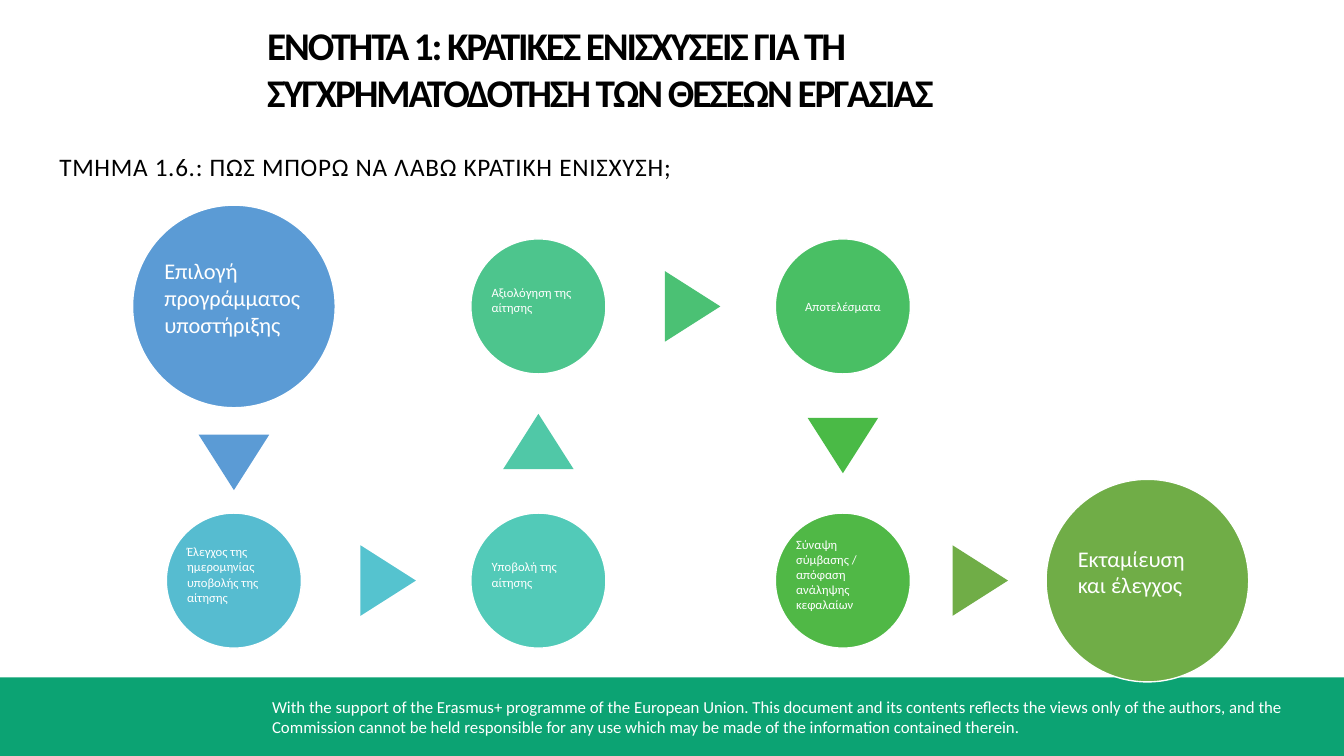
import pptx
import pptx.util
import pptx.dml.color
import pptx.enum.shapes
import pptx.enum.text

Inches = pptx.util.Inches
Pt = pptx.util.Pt
KIND = pptx.enum.shapes.MSO_SHAPE
ANCHOR = pptx.enum.text.MSO_ANCHOR
ALIGN = pptx.enum.text.PP_ALIGN

TITLE = "ΕΝΌΤΗΤΑ 1: ΚΡΑΤΙΚΈΣ ΕΝΙΣΧΎΣΕΙΣ ΓΙΑ ΤΗ ΣΥΓΧΡΗΜΑΤΟΔΌΤΗΣΗ ΤΩΝ ΘΈΣΕΩΝ ΕΡΓΑΣΊΑΣ"
TOPIC = "ΤΜΗΜΑ 1.6.: ΠΩΣ ΜΠΟΡΩ ΝΑ ΛΆΒΩ ΚΡΑΤΙΚΉ ΕΝΊΣΧΥΣΗ;"
NOTE = (
    "With the support of the Erasmus+ programme of the European Union. "
    "This document and its contents reflects the views only of the authors, "
    "and the Commission cannot be held responsible for any use which may be "
    "made of the information contained therein."
)
COLORS = {
    "white": "FFFFFF", "black": "000000", "bar": "0CA373",
    "pick": "5B9BD5", "check": "56BCD0", "apply": "52CAB8", "rate": "4DC58D",
    "result": "49BF64", "sign": "50B846", "pay": "70AD47",
    "to check": "5B9BD5", "to apply": "55C3CF", "to rate": "50C8A7",
    "to result": "4BC174", "to sign": "4ABA46", "to pay": "70AD47",
}
STEPS = [
    ("pick", 0, 0, "big", "Επιλογή προγράμματος υποστήριξης"),
    ("check", 0, 1, "small", "Έλεγχος της ημερομηνίας υποβολής της αίτησης"),
    ("apply", 1, 1, "small", "Υποβολή της αίτησης"),
    ("rate", 1, 0, "small", "Αξιολόγηση της αίτησης"),
    ("result", 2, 0, "small", "Αποτελέσματα"),
    ("sign", 2, 1, "small", "Σύναψη σύμβασης / απόφαση ανάληψης κεφαλαίων"),
    ("pay", 3, 1, "big", "Εκταμίευση και έλεγχος"),
]
SIZES = {"big": (2.01, 16, 0.02, 0.18), "small": (1.34, 9, 0.01, 0.12)}
LEFT, TOP = 2.32, 3.04
STEP_X, STEP_Y = 3.02, 2.72
HEAD_W, HEAD_H = 0.7, 0.55
NUDGE = 0.02
TURNS = {(1, 0): 90, (0, 1): 180, (0, -1): 0}


def color(name):
    return pptx.dml.color.RGBColor.from_string(COLORS[name])


def write(para, text, size, tint, bold=False):
    run = para.add_run()
    run.text = text
    run.font.name = "Calibri"
    run.font.size = Pt(size)
    run.font.bold = bold
    run.font.color.rgb = color(tint)
    return run


def write_caps(para, text, size, gap, bold=False):
    run = write(para, text, size, "black", bold)
    run.font.language_id = pptx.enum.lang.MSO_LANGUAGE_ID.GREEK
    props = run.font._element
    props.set("cap", "all")
    props.set("spc", str(gap))


def pad(frame, left, top, right, low):
    frame.margin_left, frame.margin_top = Inches(left), Inches(top)
    frame.margin_right, frame.margin_bottom = Inches(right), Inches(low)


def add_shape(slide, kind, x, y, w, h, fill):
    shape = slide.shapes.add_shape(kind, Inches(x), Inches(y), Inches(w), Inches(h))
    shape.shadow.inherit = False
    shape.fill.solid()
    shape.fill.fore_color.rgb = color(fill)
    shape.line.fill.background()
    return shape


def add_box(slide, x, y, w, h):
    box = slide.shapes.add_textbox(Inches(x), Inches(y), Inches(w), Inches(h))
    box.text_frame.word_wrap = True
    return box.text_frame.paragraphs[0]


def center(col, row):
    return LEFT + col * STEP_X, TOP + row * STEP_Y


def add_step(slide, step):
    name, col, row, size, text = step
    wide, points, inset, lift = SIZES[size]
    x, y = center(col, row)
    disc = add_shape(slide, KIND.OVAL, x - wide / 2, y - wide / 2, wide, wide, name)
    disc.line.color.rgb = color("white")
    disc.line.width = Pt(1)
    frame = disc.text_frame
    frame.word_wrap = True
    frame.vertical_anchor = ANCHOR.MIDDLE
    single = " " not in text
    pad(frame, inset, inset, inset, inset if single else inset + lift)
    para = frame.paragraphs[0]
    para.alignment = ALIGN.CENTER if single else ALIGN.LEFT
    write(para, text, points, "white")


def add_head(slide, start, end):
    x1, y1 = center(start[1], start[2])
    x2, y2 = center(end[1], end[2])
    dx, dy = end[1] - start[1], end[2] - start[2]
    shift = (SIZES[start[3]][0] - SIZES[end[3]][0]) / 4 + NUDGE
    x = (x1 + x2) / 2 + dx * shift
    y = (y1 + y2) / 2 + dy * shift
    head = add_shape(slide, KIND.ISOSCELES_TRIANGLE, x - HEAD_W / 2,
                     y - HEAD_H / 2, HEAD_W, HEAD_H, "to " + end[0])
    head.rotation = TURNS[dx, dy]


def main():
    deck = pptx.Presentation()
    deck.slide_width, deck.slide_height = Inches(13.33), Inches(7.5)
    slide = deck.slides.add_slide(deck.slide_layouts[5])

    title = slide.shapes.title
    title.left, title.top = Inches(2.64), Inches(0.2)
    title.width, title.height = Inches(8.9), Inches(0.96)
    frame = title.text_frame
    frame.word_wrap = True
    frame.auto_size = pptx.enum.text.MSO_AUTO_SIZE.NONE
    frame.vertical_anchor = ANCHOR.TOP
    pad(frame, 0.01, 0.01, 0, 0)
    frame.paragraphs[0].alignment = ALIGN.LEFT
    write_caps(frame.paragraphs[0], TITLE, 28, -150, True)

    write_caps(add_box(slide, 0.49, 1.45, 6.66, 0.4), TOPIC, 18, 50)
    add_shape(slide, KIND.RECTANGLE, 0, 6.72, 13.33, 0.78, "bar")
    write(add_box(slide, 2.6, 6.86, 10.42, 0.5), NOTE, 12, "white")

    for step in STEPS:
        add_step(slide, step)
    for start, end in zip(STEPS, STEPS[1:]):
        add_head(slide, start, end)
    deck.save("out.pptx")


import pptx.enum.lang

if __name__ == "__main__":
    main()
